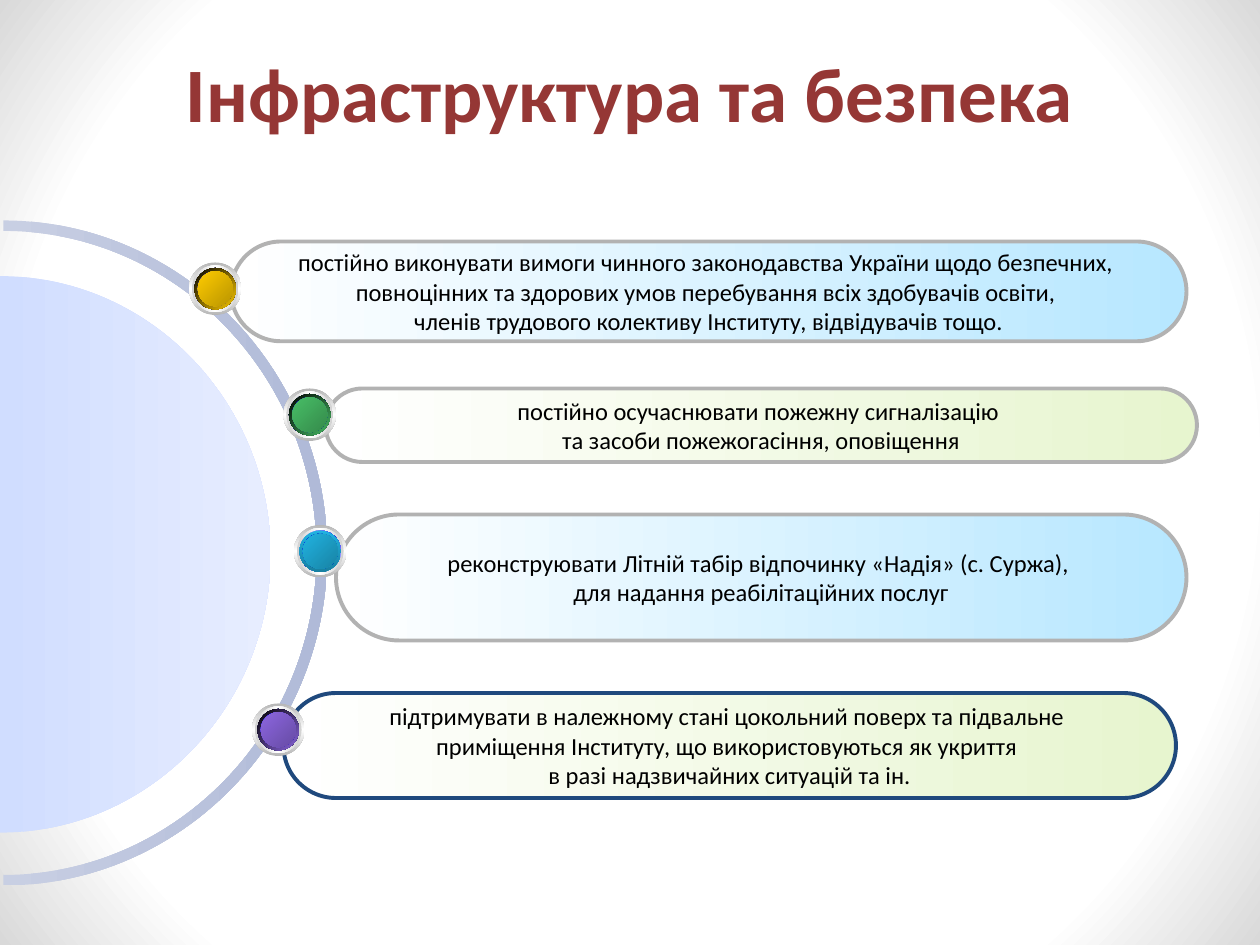
from lxml import etree
from pptx import Presentation
from pptx.dml.color import RGBColor
from pptx.enum.shapes import MSO_SHAPE as SHAPE
from pptx.enum.text import MSO_ANCHOR as ANCHOR, PP_ALIGN as ALIGN
from pptx.oxml.ns import qn
from pptx.util import Pt

FONT = "Calibri"
ARC_PULL = 0.55
COLORS = {
    "white": "FFFFFF", "black": "000000", "corner": "D9D9D9", "title": "953735",
    "sky": "B7E7FF", "lime": "E7F5CF", "grey": "B2B2B2", "navy": "1F497D",
    "ring_left": "C8CFE3", "ring_right": "B0BAD8",
    "disc_left": "D0DDFF", "disc_right": "E7EDFF",
    "steel": "B6B6B6", "silver": "D1D1D1", "blue": "0000FF", "deep_blue": "0000C3",
    "gold": "FFCC00", "dark_gold": "BA9500",
    "green": "48BE67", "dark_green": "358B4B",
    "cyan": "21B3E1", "rim_cyan": "1880A1", "dark_cyan": "1883A4",
    "violet": "8D67E1", "dark_violet": "674BA4",
}
ITEMS = [
    {"pill": (132, 138, 546, 57), "tint": "sky", "border": "grey", "node": (108, 150),
     "rim": ("black", "gold"), "rim_angle": 45, "core": ("gold", "dark_gold"),
     "lines": ["постійно виконувати вимоги чинного законодавства України щодо безпечних, ",
               "повноцінних та здорових умов перебування всіх здобувачів освіти, ",
               "членів трудового колективу Інституту, відвідувачів тощо."]},
    {"pill": (186, 222, 498, 42), "tint": "lime", "border": "grey", "node": (162, 222),
     "rim": ("black", "green"), "rim_angle": 45, "core": ("green", "dark_green"),
     "lines": ["постійно осучаснювати пожежну сигналізацію ",
               "та засоби пожежогасіння, оповіщення"]},
    {"pill": (192, 294, 486, 72), "tint": "sky", "border": "grey", "node": (168, 300),
     "rim": ("cyan", "rim_cyan"), "rim_angle": 90, "core": ("cyan", "dark_cyan"),
     "lines": ["реконструювати Літній табір відпочинку «Надія» (с. Суржа), ",
               "для надання реабілітаційних послуг"]},
    {"pill": (162, 396, 510, 60), "tint": "lime", "border": "navy", "node": (144, 402),
     "rim": ("black", "violet"), "rim_angle": 45, "core": ("violet", "dark_violet"),
     "lines": ["підтримувати в належному стані цокольний поверх та підвальне ",
               "приміщення Інституту, що використовуються як укриття ",
               "в разі надзвичайних ситуацій та ін."]},
]


def rgb(name):
    return RGBColor.from_string(COLORS[name])


def paint(shape, stops, angle=None):
    shape.fill.solid()
    properties = shape.element.spPr
    gradient = etree.Element(qn("a:gradFill"), rotWithShape="1")
    stop_list = etree.SubElement(gradient, qn("a:gsLst"))
    for position, name in stops:
        stop = etree.SubElement(stop_list, qn("a:gs"), pos=str(position * 1000))
        etree.SubElement(stop, qn("a:srgbClr"), val=COLORS[name])
    if angle is None:
        radial = etree.SubElement(gradient, qn("a:path"), path="circle")
        etree.SubElement(radial, qn("a:fillToRect"), l="50000", t="50000", r="50000", b="50000")
    else:
        etree.SubElement(gradient, qn("a:lin"), ang=str(angle * 60000), scaled="0")
    properties.replace(properties.find(qn("a:solidFill")), gradient)
    shape.line.fill.background()
    shape.shadow.inherit = False


def even_stops(names):
    return [(i * 100 // (len(names) - 1), name) for i, name in enumerate(names)]


def write_text(shape, lines, size, color, bold=False, wrap=True):
    frame = shape.text_frame
    frame.word_wrap = wrap
    frame.vertical_anchor = ANCHOR.MIDDLE
    for i, line in enumerate(lines):
        paragraph = frame.add_paragraph() if i else frame.paragraphs[0]
        paragraph.alignment = ALIGN.CENTER
        run = paragraph.add_run()
        run.text = line
        run.font.name = FONT
        run.font.size = Pt(size)
        run.font.bold = bold
        run.font.color.rgb = rgb(color)


def add_backdrop(deck, slide):
    backdrop = slide.shapes.add_shape(SHAPE.RECTANGLE, 0, 0, deck.slide_width, deck.slide_height)
    paint(backdrop, [(79, "white"), (100, "corner")])
    deck.slide_master.element.cSld.spTree.insert(2, backdrop.element)


def add_title(slide, left, top, width, height):
    title = slide.shapes.title
    title.left, title.top, title.width, title.height = map(Pt, (left, top, width, height))
    write_text(title, ["Інфраструктура та безпека"], 44, "title", bold=True)


def half_ellipse(left, middle, rx, ry):
    corners = [(left, middle - ry), (left + rx, middle), (left, middle + ry)]
    return [(Pt(x), Pt(y)) for x, y in corners]


def round_segment(segment, start, end, starts_level):
    (x1, y1), (x2, y2) = start, end
    dx, dy = (x2 - x1) * ARC_PULL, (y2 - y1) * ARC_PULL
    if starts_level:
        controls = [(x1 + dx, y1), (x2, y2 - dy)]
    else:
        controls = [(x1, y1 + dy), (x2 - dx, y2)]
    curve = etree.Element(qn("a:cubicBezTo"))
    for x, y in controls + [end]:
        etree.SubElement(curve, qn("a:pt"), x=str(round(x)), y=str(round(y)))
    segment.getparent().replace(segment, curve)


def add_outline(slide, arcs, names):
    points = [point for arc in arcs for point in arc]
    builder = slide.shapes.build_freeform(*points[0], scale=1.0)
    builder.add_line_segments(points[1:], close=True)
    outline = builder.convert_to_shape()
    segments = list(outline.element.iter(qn("a:lnTo")))
    local = [(int(pt.get("x")), int(pt.get("y"))) for pt in outline.element.iter(qn("a:pt"))]
    for i in range(len(points) - 1):
        place = i % 3
        if place < 2:
            round_segment(segments[i], local[i], local[i + 1], place == 0)
    paint(outline, even_stops(names), 0)


def add_half_wheel(slide, left, top, width, height):
    middle = top + height / 2
    band = 6
    outer = half_ellipse(left + 2, middle, width - 2, height / 2)
    inner = half_ellipse(left + 2, middle, width - 2 - band, height / 2 - band)
    add_outline(slide, [outer, inner[::-1]], ("ring_left", "ring_right"))
    disc = half_ellipse(left, middle + 0.8, width - 32.4, height / 2 - 31)
    add_outline(slide, [disc], ("disc_left", "disc_right"))


def add_pill(slide, left, top, width, height, item):
    pill = slide.shapes.add_shape(SHAPE.ROUNDED_RECTANGLE, *map(Pt, (left, top, width, height)))
    pill.adjustments[0] = 0.5
    paint(pill, even_stops(("white", item["tint"])), 0)
    pill.line.color.rgb = rgb(item["border"])
    pill.line.width = Pt(2.25)
    write_text(pill, item["lines"], 14, "black", wrap=False)


def add_node(slide, left, top, size, item):
    layers = [
        (1, ("steel", "white", "steel"), 90),
        (0.89, ("silver", "white", "silver"), 0),
        (0.79, ("white", "blue", "white"), 45),
        (0.79, item["rim"], item["rim_angle"]),
        (0.67, ("deep_blue", "blue", "deep_blue"), 315),
        (0.67, item["core"], 45),
    ]
    node = slide.shapes.add_group_shape()
    for share, names, angle in layers:
        inset = size * (1 - share) / 2
        box = (left + inset, top + inset, size * share, size * share)
        paint(node.shapes.add_shape(SHAPE.OVAL, *map(Pt, box)), even_stops(names), angle)


def main():
    deck = Presentation()
    deck.slide_width, deck.slide_height = Pt(720), Pt(540)
    slide = deck.slides.add_slide(deck.slide_layouts[5])
    add_backdrop(deck, slide)
    add_title(slide, 36, 12, 648, 81)
    add_half_wheel(slide, 0, 126, 187, 380)
    for item in reversed(ITEMS):
        add_pill(slide, *item["pill"], item)
    for item in ITEMS:
        add_node(slide, *item["node"], 30, item)
    deck.save("out.pptx")


if __name__ == "__main__":
    main()
